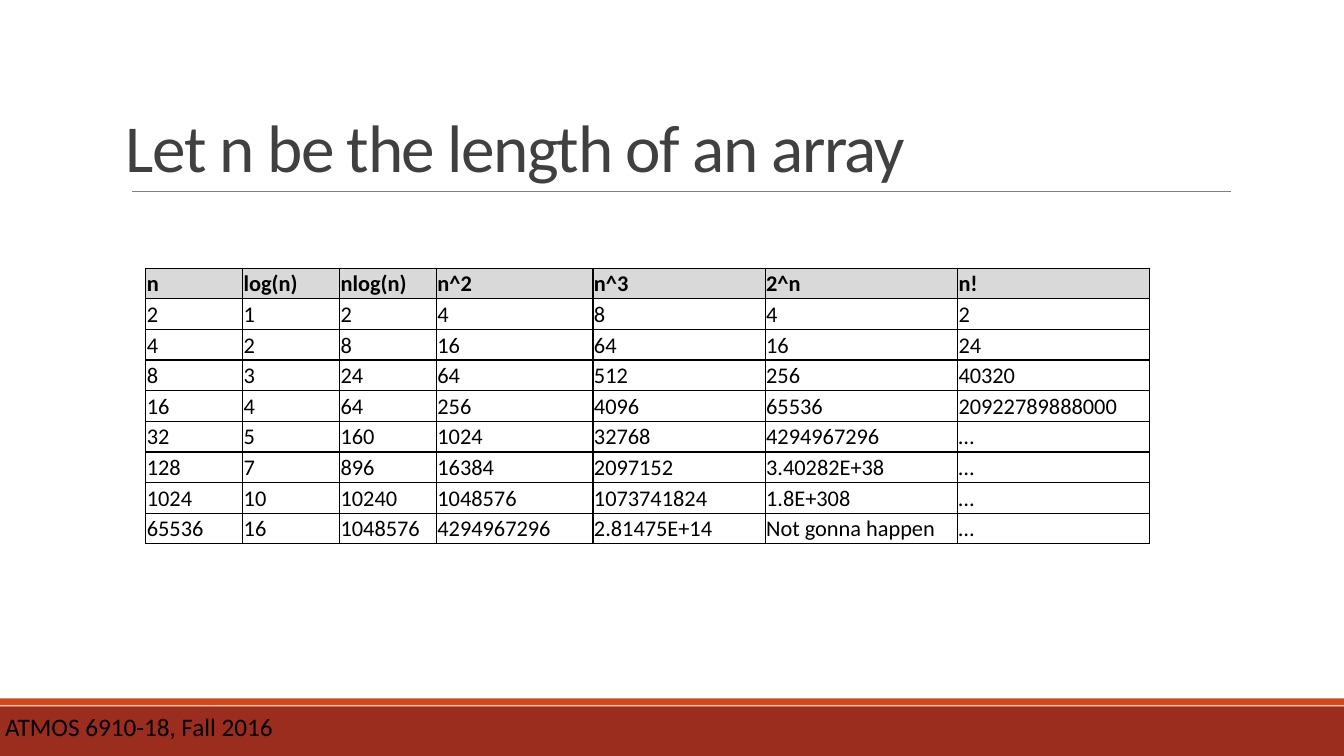
"""Build a slide comparing growth rates of functions of an array length."""
from dataclasses import dataclass

from lxml.etree import SubElement
from pptx import Presentation
from pptx.dml.color import RGBColor as RGB
from pptx.enum.shapes import MSO_CONNECTOR as Connector, MSO_SHAPE as Preset
from pptx.enum.text import MSO_ANCHOR as Anchor, MSO_AUTO_SIZE as AutoSize, PP_ALIGN as Align
from pptx.oxml.ns import qn
from pptx.util import Pt

WIDTH, HEIGHT = 960, 540


@dataclass(frozen=True)
class Theme:
    font: str = "Calibri"
    title_size: int = 48
    footer_size: int = 18
    table_size: int = 16
    ink: str = "000000"
    title_ink: str = "404040"
    rule: str = "808080"
    header: str = "D9D9D9"
    band: str = "9B2D1F"
    accent: str = "D34817"


def write_text(frame, text, *, font, size, color, bold=False, spacing=None, line=None):
    frame.text = text
    paragraph = frame.paragraphs[0]
    paragraph.alignment = Align.LEFT
    if line:
        paragraph.line_spacing = line
    run = paragraph.runs[0]
    run.font.name, run.font.size, run.font.bold = font, Pt(size), bold
    run.font.color.rgb = RGB.from_string(color)
    if spacing is not None:
        run.font._element.set("spc", str(round(spacing * 100)))


def set_margins(target, margin):
    target.margin_left = target.margin_right = Pt(margin)
    target.margin_top = target.margin_bottom = Pt(margin)


def add_borders(cell, color, width):
    properties = cell._tc.get_or_add_tcPr()
    for side in ("lnL", "lnR", "lnT", "lnB"):
        border = SubElement(properties, qn(f"a:{side}"), w=str(Pt(width)))
        fill = SubElement(border, qn("a:solidFill"))
        SubElement(fill, qn("a:srgbClr"), val=color)


class SlideBuilder:
    def __init__(self, slide, theme):
        self.slide, self.theme = slide, theme

    def bar(self, left, top, width, height, color):
        bar = self.slide.shapes.add_shape(Preset.RECTANGLE, Pt(left), Pt(top), Pt(width), Pt(height))
        bar.shadow.inherit = False
        bar.fill.solid()
        bar.fill.fore_color.rgb = RGB.from_string(color)
        bar.line.fill.background()

    def label(self, text, left, top, width, height):
        label = self.slide.shapes.add_textbox(Pt(left), Pt(top), Pt(width), Pt(height))
        frame = label.text_frame
        frame.word_wrap = True
        set_margins(frame, 3.6)
        write_text(frame, text, font=self.theme.font, size=self.theme.footer_size, color=self.theme.ink)

    def rule(self, left, right, y):
        rule = self.slide.shapes.add_connector(Connector.STRAIGHT, Pt(left), Pt(y), Pt(right), Pt(y))
        rule.line.color.rgb = RGB.from_string(self.theme.rule)
        rule.line.width = Pt(0.5)
        SubElement(rule._element.spPr, qn("a:effectLst"))

    def title(self, text, left, top, width, height):
        title = self.slide.shapes.title
        title.left, title.top, title.width, title.height = Pt(left), Pt(top), Pt(width), Pt(height)
        frame = title.text_frame
        frame.word_wrap, frame.auto_size = True, AutoSize.NONE
        frame.vertical_anchor = Anchor.BOTTOM
        set_margins(frame, 3.6)
        write_text(frame, text, font=self.theme.font, size=self.theme.title_size,
                   color=self.theme.title_ink, spacing=-1, line=0.85)

    def table(self, rows, left, top, widths, row_height):
        table = self.slide.shapes.add_table(
            len(rows), len(widths), Pt(left), Pt(top), Pt(sum(widths)), Pt(row_height * len(rows))).table
        table.horz_banding = False
        for column, width in zip(table.columns, widths):
            column.width = Pt(width)
        for r, values in enumerate(rows):
            table.rows[r].height = Pt(row_height)
            for c, value in enumerate(values):
                self.cell(table.cell(r, c), value, header=r == 0)

    def cell(self, cell, value, header):
        set_margins(cell, 0.7)
        cell.vertical_anchor = Anchor.BOTTOM
        add_borders(cell, self.theme.ink, 1)
        if header:
            cell.fill.solid()
            cell.fill.fore_color.rgb = RGB.from_string(self.theme.header)
        else:
            cell.fill.background()
        write_text(cell.text_frame, value, font=self.theme.font, size=self.theme.table_size,
                   color=self.theme.ink, bold=header)


GROWTH = [
    ("n", "log(n)", "nlog(n)", "n^2", "n^3", "2^n", "n!"),
    ("2", "1", "2", "4", "8", "4", "2"),
    ("4", "2", "8", "16", "64", "16", "24"),
    ("8", "3", "24", "64", "512", "256", "40320"),
    ("16", "4", "64", "256", "4096", "65536", "20922789888000"),
    ("32", "5", "160", "1024", "32768", "4294967296", "…"),
    ("128", "7", "896", "16384", "2097152", "3.40282E+38", "…"),
    ("1024", "10", "10240", "1048576", "1073741824", "1.8E+308", "…"),
    ("65536", "16", "1048576", "4294967296", "2.81475E+14", "Not gonna happen", "…"),
]


def main():
    deck = Presentation()
    deck.slide_width, deck.slide_height = Pt(WIDTH), Pt(HEIGHT)
    theme = Theme()
    builder = SlideBuilder(deck.slides.add_slide(deck.slide_layouts[5]), theme)
    builder.bar(0, 504.6, WIDTH, HEIGHT - 504.6, theme.band)
    builder.label("ATMOS 6910-18, Fall 2016", 0, 504.6, WIDTH, 28)
    builder.bar(0, 498.8, WIDTH, 5, theme.accent)
    builder.rule(94, 879, 136.8)
    builder.title("Let n be the length of an array", 86.4, 22.5, 792, 114.3)
    builder.table(GROWTH, 104.2, 191.5, [69.2] * 3 + [111.8, 123] + [137.4] * 2, 21.9)
    deck.save("out.pptx")


if __name__ == "__main__":
    main()
